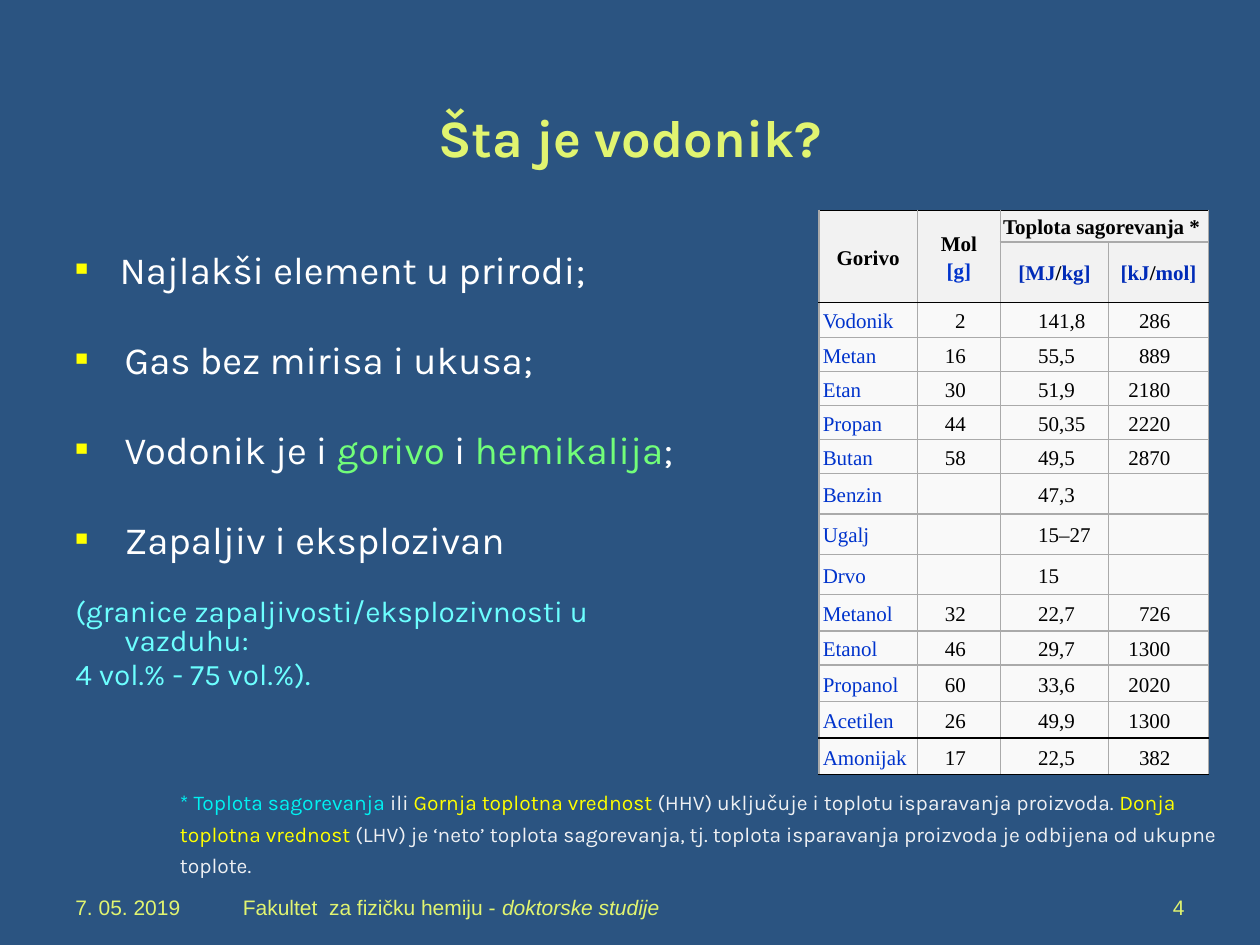
from lxml.etree import SubElement
from pptx import Presentation
from pptx.dml.color import RGBColor as RGB
from pptx.enum.text import MSO_ANCHOR as Anchor, PP_ALIGN as Align
from pptx.oxml.ns import qn
from pptx.util import Inches, Pt

HUE = {
    "back": "2B5481", "lime": "E1F470", "white": "FFFFFF", "green": "72FE79",
    "aqua": "6CFFFF", "cyan": "00F2F2", "yellow": "FFFF00", "pale": "EEF0F3",
    "black": "000000", "blue": "0033CC", "navy": "002BB8",
    "head": "F2F2F2", "cell": "F9F9F9", "grid": "AAAAAA",
}


def write(para, parts, size, face="Karla", bold=False, align=Align.LEFT):
    para.alignment = align
    para.font.size, para.font.name, para.font.bold = Pt(size), face, bold
    for text, hue in parts:
        run = para.add_run()
        run.text = text
        run.font.color.rgb = RGB.from_string(HUE[hue])


def add_box(left, top, width, height, anchor=Anchor.TOP):
    box = slide.shapes.add_textbox(Inches(left), Inches(top), Inches(width), Inches(height))
    frame = box.text_frame
    frame.word_wrap = True
    frame.vertical_anchor = anchor
    return frame


deck = Presentation()
deck.slide_width, deck.slide_height = Inches(10), Inches(7.5)
slide = deck.slides.add_slide(deck.slide_layouts[6])
slide.background.fill.solid()
slide.background.fill.fore_color.rgb = RGB.from_string(HUE["back"])

title = add_box(0.5, 0.67, 9, 0.83, Anchor.MIDDLE)
write(title.paragraphs[0], [("Šta je vodonik?", "lime")], 30, bold=True, align=Align.CENTER)

points = [
    (True, 0.35, 0, 22, [("Najlakši element u prirodi;", "white")]),
    (True, 0.39, 30.3, 22, [("Gas bez mirisa i ukusa;", "white")]),
    (True, 0.39, 30.3, 22, [("Vodonik je i ", "white"), ("gorivo", "green"), (" i ", "white"),
                            ("hemikalija", "green"), (";", "white")]),
    (True, 0.39, 30.3, 22, [("Zapaljiv i eksplozivan", "white")]),
    (False, 0.39, 22, 17, [("(granice zapaljivosti/eksplozivnosti u vazduhu:", "aqua")]),
    (False, 0.39, 3, 17, [("4 vol.% - 75 vol.%).", "aqua")]),
]
body = add_box(0.5, 1.67, 5.25, 3.92)
body.margin_top = Inches(0.35)
for i, (mark, indent, gap, size, parts) in enumerate(points):
    para = body.add_paragraph() if i else body.paragraphs[0]
    para.line_spacing = 0.8
    para.space_before = Pt(gap)
    props = para._p.get_or_add_pPr()
    props.set("marL", str(Inches(indent)))
    props.set("indent", str(-Inches(indent)))
    if mark:
        tint = SubElement(props, qn("a:buClr"))
        SubElement(tint, qn("a:srgbClr"), val=HUE["yellow"])
        SubElement(props, qn("a:buSzPct"), val="55000")
        SubElement(props, qn("a:buFont"), typeface="Arial")
        SubElement(props, qn("a:buChar"), char="■")
    write(para, parts, size)

fuels = [
    ("Vodonik", "2", "141,8", "286"), ("Metan", "16", "55,5", "889"),
    ("Etan", "30", "51,9", "2180"), ("Propan", "44", "50,35", "2220"),
    ("Butan", "58", "49,5", "2870"), ("Benzin", "", "47,3", ""),
    ("Ugalj", "", "15–27", ""), ("Drvo", "", "15", ""),
    ("Metanol", "32", "22,7", "726"), ("Etanol", "46", "29,7", "1300"),
    ("Propanol", "60", "33,6", "2020"), ("Acetilen", "26", "49,9", "1300"),
    ("Amonijak", "17", "22,5", "382"),
]
widths = [0.78, 0.66, 0.86, 0.79]
heights = [0.23, 0.44, 0.28] + [0.27] * 5 + [0.29, 0.27, 0.29, 0.27] + [0.29] * 3
table = slide.shapes.add_table(
    len(heights), len(widths), Inches(6.5), Inches(1.67),
    Inches(sum(widths)), Inches(sum(heights))).table
for col, width in zip(table.columns, widths):
    col.width = Inches(width)
for row, height in zip(table.rows, heights):
    row.height = Inches(height)

dark = {0, 2, 14, 15}
for r in range(len(heights)):
    for c in range(len(widths)):
        cell = table.cell(r, c)
        cell.margin_left = cell.margin_right = Inches(0.03)
        cell.margin_top = cell.margin_bottom = Inches(0.01)
        cell.vertical_anchor = Anchor.MIDDLE
        props = cell._tc.get_or_add_tcPr()
        above, below = ("black" if n in dark else "grid" for n in (r, r + 1))
        if r == 0 and c < 2:
            below = "black"
        for side, hue in zip("LRTB", ("grid", "grid", above, below)):
            line = SubElement(props, qn("a:ln" + side), w=str(Pt(1)))
            fill = SubElement(line, qn("a:solidFill"))
            SubElement(fill, qn("a:srgbClr"), val=HUE[hue])
        cell.fill.solid()
        cell.fill.fore_color.rgb = RGB.from_string(HUE["head" if r < 2 else "cell"])

for first, last in [((0, 0), (1, 0)), ((0, 1), (1, 1)), ((0, 2), (0, 3))]:
    table.cell(*first).merge(table.cell(*last))

heads = [
    (0, 0, [[("Gorivo", "black")]]),
    (0, 1, [[("Mol", "black")], [("[g]", "blue")]]),
    (0, 2, [[("Toplota sagorevanja * ", "black")]]),
    (1, 2, [[("[MJ", "navy"), ("/", "black"), ("kg]", "navy")]]),
    (1, 3, [[("[kJ", "navy"), ("/", "black"), ("mol]", "navy")]]),
]
for r, c, lines in heads:
    frame = table.cell(r, c).text_frame
    for i, parts in enumerate(lines):
        para = frame.add_paragraph() if i else frame.paragraphs[0]
        para.line_spacing = 1.15
        write(para, parts, 12, "Times New Roman", True, Align.CENTER)
table.cell(0, 2).margin_left = table.cell(0, 2).margin_right = Inches(0.01)

for r, fuel in enumerate(fuels, 2):
    for c, text in enumerate(fuel):
        cell = table.cell(r, c)
        cell.margin_left = Inches([0.03, 0.3 if len(text) == 1 else 0.22, 0.3, 0][c])
        cell.margin_right = Inches(0.3 if c == 3 else 0.03)
        para = cell.text_frame.paragraphs[0]
        para.line_spacing = 1.15
        write(para, [(text, "black" if c else "blue")], 12, "Times New Roman",
              align=Align.RIGHT if c == 3 else Align.LEFT)

note = add_box(1.33, 6.17, 8.67, 0.61).paragraphs[0]
note.line_spacing = 1.25
write(note, [
    ("* Toplota sagorevanja ", "cyan"), ("ili ", "pale"),
    ("Gornja toplotna vrednost ", "yellow"),
    ("(HHV) uključuje i toplotu isparavanja proizvoda. ", "pale"),
    ("Donja toplotna vrednost ", "yellow"),
    ("(LHV) je ‘neto’ toplota sagorevanja, tj. toplota isparavanja proizvoda "
     "je odbijena od ukupne toplote.", "pale"),
], 12)

feet = [
    (0.5, 2.33, Align.LEFT, ["7. 05. 2019"]),
    (1.83, 6.5, Align.LEFT, ["Fakultet  za fizičku hemiju - ", "doktorske studije"]),
    (7.17, 2.33, Align.RIGHT, ["4"]),
]
for left, width, align, texts in feet:
    para = add_box(left, 6.83, width, 0.52, Anchor.BOTTOM).paragraphs[0]
    write(para, [(text, "lime") for text in texts], 12, "Arial", align=align)
    for run in para.runs[1:]:
        run.font.italic = True

deck.save("out.pptx")
